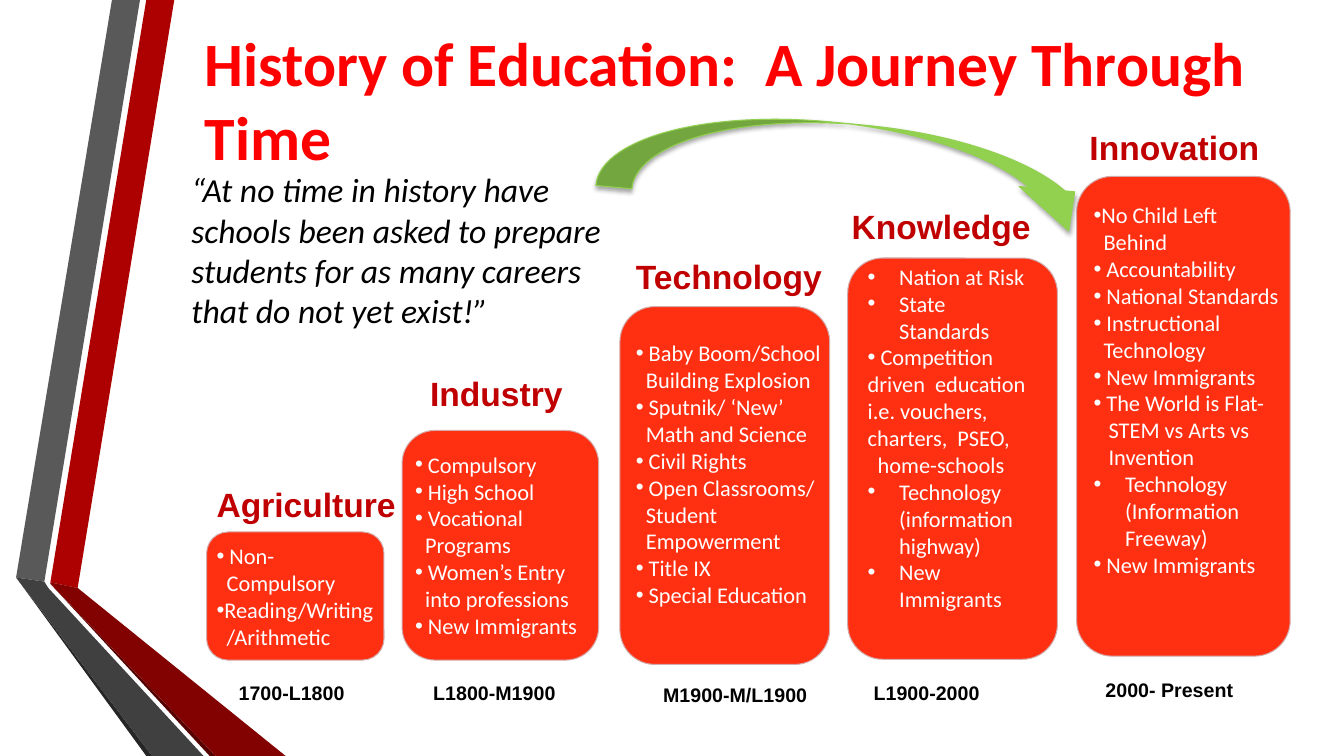
"""Build a slide showing the eras of education as rising cards."""
from lxml import etree
from pptx import Presentation
from pptx import util as u
from pptx.dml import color
from pptx.enum import shapes, text
from pptx.oxml import ns

TITLE = "History of Education:  A Journey Through Time"
QUOTE = ("“At no time in history have schools been asked to prepare students "
         "for as many careers that do not yet exist!”")

# style: (left margin, bulleted)
STYLES = {"item": (9.2, True), "tight": (5.6, True), "hang": (22.5, True),
          "more": (7.2, False), "deep": (10.8, False), "flush": (0, False)}

ERAS = [
    {"name": "Agriculture", "name_box": (147.6, 342, 155, 36),
     "card": (147.6, 380, 126.7, 91.5), "list_box": (147.6, 383.8, 130.3, 84),
     "dates": "1700-L1800", "dates_at": (163.4, 483),
     "points": [("item", "Non-"), ("more", "Compulsory"),
                ("tight", "Reading/Writing"), ("more", "/Arithmetic")]},
    {"name": "Industry", "name_box": (300.2, 262.8, 114, 36),
     "card": (287.2, 307.5, 140.4, 164), "list_box": (289.4, 318.5, 145.4, 142),
     "dates": "L1800-M1900", "dates_at": (302.4, 483),
     "points": [("item", "Compulsory"), ("item", "High School"),
                ("item", "Vocational"), ("more", "Programs"),
                ("item", "Women’s Entry"), ("more", "into professions"),
                ("item", "New Immigrants")]},
    {"name": "Technology", "name_box": (447.1, 179.3, 162, 36),
     "card": (442.8, 219, 149.8, 255.6), "list_box": (447.1, 239, 160.6, 220),
     "dates": "M1900-M/L1900", "dates_at": (466.6, 484.6),
     "points": [("item", "Baby Boom/School"), ("more", "Building Explosion"),
                ("item", "Sputnik/ ‘New’"), ("more", "Math and Science"),
                ("item", "Civil Rights"), ("item", "Open Classrooms/"),
                ("more", "Student"), ("more", "Empowerment"),
                ("item", "Title IX"), ("item", "Special Education")]},
    {"name": "Knowledge", "name_box": (601.2, 143.3, 157.7, 36),
     "card": (605.5, 184.3, 149.8, 286.6), "list_box": (612.7, 184.3, 129.6, 300),
     "dates": "L1900-2000", "dates_at": (617, 483),
     "points": [("hang", "Nation at Risk"), ("hang", "State Standards"),
                ("item", "Competition"),
                ("flush", "driven  education i.e. vouchers, charters,  PSEO,"),
                ("more", "home-schools"),
                ("hang", "Technology (information highway)"),
                ("hang", "New Immigrants")]},
    {"name": "Innovation", "name_box": (771.1, 87.1, 157.7, 36),
     "card": (769, 126, 152.6, 342.7), "list_box": (774, 140.4, 152.6, 298),
     "dates": "2000- Present", "dates_at": (782.6, 481),
     "points": [("tight", "No Child Left"), ("more", "Behind"),
                ("item", "Accountability"), ("item", "National Standards"),
                ("item", "Instructional"), ("more", "Technology"),
                ("item", "New Immigrants"), ("item", "The World is Flat-"),
                ("deep", "STEM vs Arts vs"), ("deep", "Invention"),
                ("hang", "Technology (Information Freeway)"),
                ("item", "New Immigrants")]},
]

RIBBONS = [
    ("AD0101", [(36, 416), (55.5, 420), (124.5, 0), (104.5, 0)]),
    ("595959", [(100, 0), (80, 0), (11.5, 412.5), (31.7, 415.5)]),
    ("262626", [(11.5, 412.5), (104.5, 540), (108.7, 540)]),
    ("560000", [(36, 417), (149.8, 540), (154, 540)]),
    ("820101", [(36, 416), (36, 417), (154, 540), (204, 540), (55.5, 420)]),
    ("404040", [(145.4, 540), (34.5, 420), (31.7, 415.5), (11.5, 412.5),
                (108.7, 540)]),
]


def rgb(value):
    return color.RGBColor.from_string(value)


def paint(shape, fill, line=None):
    shape.shadow.inherit = False
    shape.fill.solid()
    shape.fill.fore_color.rgb = rgb(fill)
    if line:
        shape.line.color.rgb = rgb(line)
        shape.line.width = u.Pt(0.75)
    else:
        shape.line.fill.background()


def add_preset(slide, kind, box, fill, line):
    shape = slide.shapes.add_shape(kind, *map(u.Pt, box))
    paint(shape, fill, line)
    return shape


def add_text(slide, box, points, size, font, ink, bold=False, italic=False):
    frame = slide.shapes.add_textbox(*map(u.Pt, box)).text_frame
    frame.word_wrap = True
    frame.vertical_anchor = text.MSO_ANCHOR.TOP
    for index, (style, words) in enumerate(points):
        paragraph = frame.add_paragraph() if index else frame.paragraphs[0]
        paragraph.text = words
        margin, bulleted = STYLES[style]
        properties = paragraph._p.get_or_add_pPr()
        properties.set("marL", str(u.Pt(margin)))
        properties.set("indent", str(u.Pt(-margin if bulleted else 0)))
        if bulleted:
            etree.SubElement(properties, ns.qn("a:buFont"), typeface="Arial")
            etree.SubElement(properties, ns.qn("a:buChar"), char="•")
        paragraph.font.size = u.Pt(size)
        paragraph.font.name = font
        paragraph.font.bold = bold
        paragraph.font.italic = italic
        paragraph.font.color.rgb = rgb(ink)


def add_ribbon(slide, fill, points):
    corners = [(u.Pt(x), u.Pt(y)) for x, y in points]
    builder = slide.shapes.build_freeform(*corners[0])
    builder.add_line_segments(corners[1:], close=True)
    paint(builder.convert_to_shape(), fill)


def add_arrow(slide):
    arrow = add_preset(slide, shapes.MSO_SHAPE.CURVED_DOWN_ARROW,
                       (427.7, 88.6, 359.3, 61.2), "92D050", "92D050")
    arrow.rotation = 5.5
    for index, value in enumerate((0.422, 0.652, 0.461)):
        arrow.adjustments[index] = value
    effects = arrow._element.spPr.find(ns.qn("a:effectLst"))
    shadow = etree.SubElement(effects, ns.qn("a:outerShdw"), blurRad=str(u.Pt(3.1)),
                              dist=str(u.Pt(1.8)), dir="5400000", rotWithShape="0")
    tint = etree.SubElement(shadow, ns.qn("a:srgbClr"), val="000000")
    etree.SubElement(tint, ns.qn("a:alpha"), val="35000")


def add_era(slide, era):
    add_preset(slide, shapes.MSO_SHAPE.ROUNDED_RECTANGLE, era["card"],
               "FF2F12", "D3ABAB")
    add_text(slide, era["name_box"], [("flush", era["name"])],
             24, "Arial", "C00000", bold=True)
    add_text(slide, era["list_box"], era["points"], 16, "Calibri", "FFFFFF")
    add_text(slide, (*era["dates_at"], 125.3, 24.5), [("flush", era["dates"])],
             14, "Arial", "000000", bold=True)


def main():
    presentation = Presentation()
    presentation.slide_width, presentation.slide_height = u.Pt(960), u.Pt(540)
    slide = presentation.slides.add_slide(presentation.slide_layouts[6])
    for fill, points in RIBBONS:
        add_ribbon(slide, fill, points)
    for era in ERAS:
        add_era(slide, era)
    add_arrow(slide)
    add_text(slide, (129.6, 117.4, 315.4, 122.4), [("flush", QUOTE)],
             24, "Calibri", "000000", italic=True)
    add_text(slide, (139, 14.4, 807, 113.8), [("flush", TITLE)],
             44, "Calibri", "FF0000", bold=True)
    presentation.save("out.pptx")


if __name__ == "__main__":
    main()
